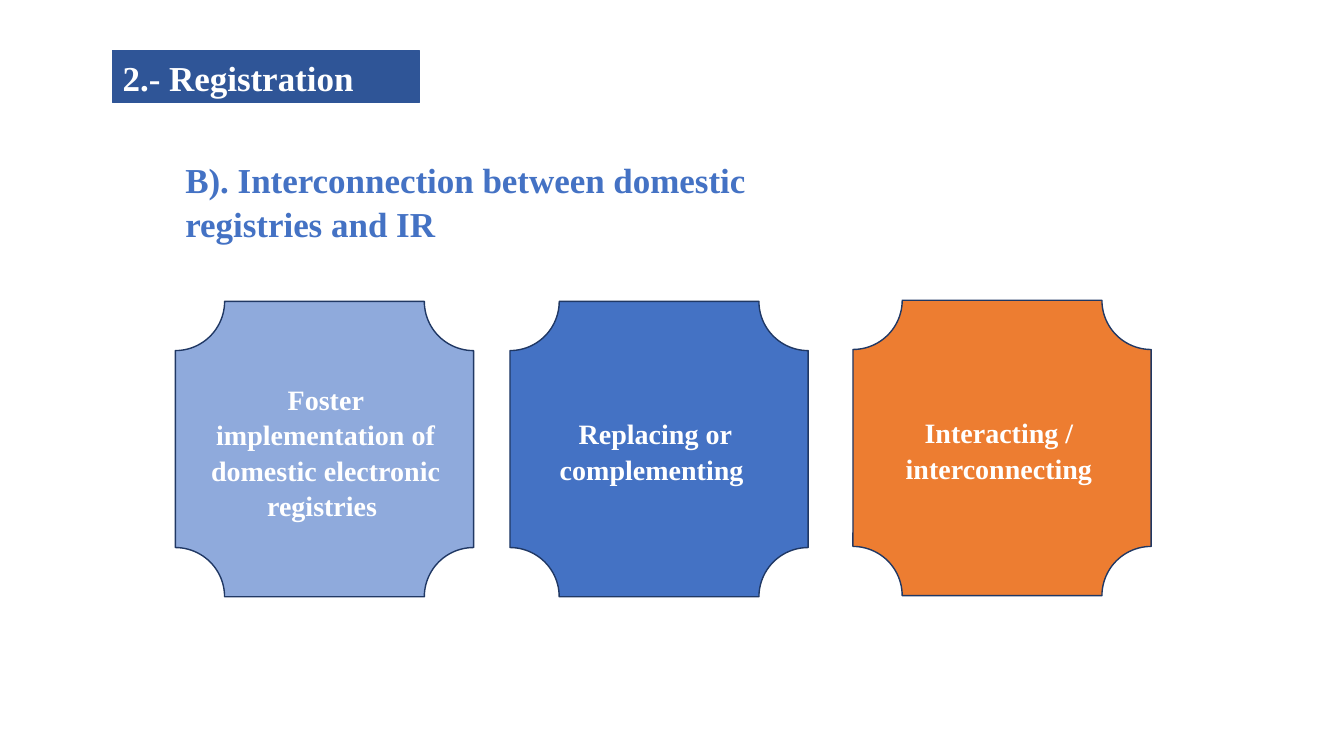
from pptx import Presentation
from pptx.dml.color import RGBColor
from pptx.enum.shapes import MSO_SHAPE as Shape
from pptx.enum.text import MSO_ANCHOR as Anchor, PP_ALIGN as Align
from pptx.util import Pt

WHITE = RGBColor(0xFF, 0xFF, 0xFF)
BANNER_BLUE = RGBColor(0x2F, 0x55, 0x97)
BLUE = RGBColor(0x44, 0x72, 0xC4)
LIGHT_BLUE = RGBColor(0x8F, 0xAA, 0xDC)
ORANGE = RGBColor(0xED, 0x7D, 0x31)
NAVY = RGBColor(0x20, 0x38, 0x64)


def write(sp, text, size=20, color=WHITE, align=Align.CENTER,
          anchor=Anchor.TOP, font="Times New Roman"):
    tf = sp.text_frame
    tf.word_wrap = True
    tf.vertical_anchor = anchor
    p = tf.paragraphs[0]
    p.alignment = align
    p.line_spacing = 1.05
    r = p.add_run()
    r.text = text
    r.font.name = font
    r.font.size = Pt(size)
    r.font.bold = True
    r.font.color.rgb = color


class SlideBuilder:
    outline = NAVY
    heading_size = 25

    def __init__(self, slide):
        self.s = slide

    def shape(self, kind, x, y, w, h, fill, line=None, width=1):
        sp = self.s.shapes.add_shape(kind, Pt(x), Pt(y), Pt(w), Pt(h))
        sp.shadow.inherit = False
        sp.fill.solid()
        sp.fill.fore_color.rgb = fill
        sp.line.color.rgb = line or self.outline
        sp.line.width = Pt(width)
        return sp

    def text(self, text, x, y, w, h, **fmt):
        sp = self.s.shapes.add_textbox(Pt(x), Pt(y), Pt(w), Pt(h))
        write(sp, text, **fmt)

    def banner(self, text, x, y, w, h):
        sp = self.shape(Shape.RECTANGLE, x, y, w, h, BANNER_BLUE, BANNER_BLUE, 0.75)
        write(sp, text, size=self.heading_size, align=Align.LEFT, anchor=Anchor.MIDDLE)

    def heading(self, text, x, y, w, h):
        self.text(text, x, y, w, h, size=self.heading_size, color=BLUE, align=Align.LEFT)

    def plaque(self, text, x, y, fill, text_x, text_h, w=213, h=211):
        self.shape(Shape.PLAQUE, x, y, w, h, fill)
        self.text(text, text_x, y + (h - text_h) / 2, 187.2, text_h)


def main():
    prs = Presentation()
    prs.slide_width, prs.slide_height = Pt(960), Pt(540)
    b = SlideBuilder(prs.slides.add_slide(prs.slide_layouts[6]))

    # Headings
    b.banner("2.- Registration", 80.5, 36, 219, 37.5)
    b.heading("B). Interconnection between domestic registries and IR", 125.3, 108, 432, 98)

    # Three plaques: text, left, top, fill, text left, text height
    plaques = [
        ("Foster implementation of domestic electronic registries ",
         125.3, 215.3, LIGHT_BLUE, 139, 104.4),
        ("Replacing or complementing ", 364.3, 215.3, BLUE, 374.4, 55.4),
        ("Interacting / interconnecting", 609.3, 214.5, ORANGE, 620, 55.4),
    ]
    for plaque in plaques:
        b.plaque(*plaque)

    prs.save("out.pptx")


if __name__ == "__main__":
    main()
